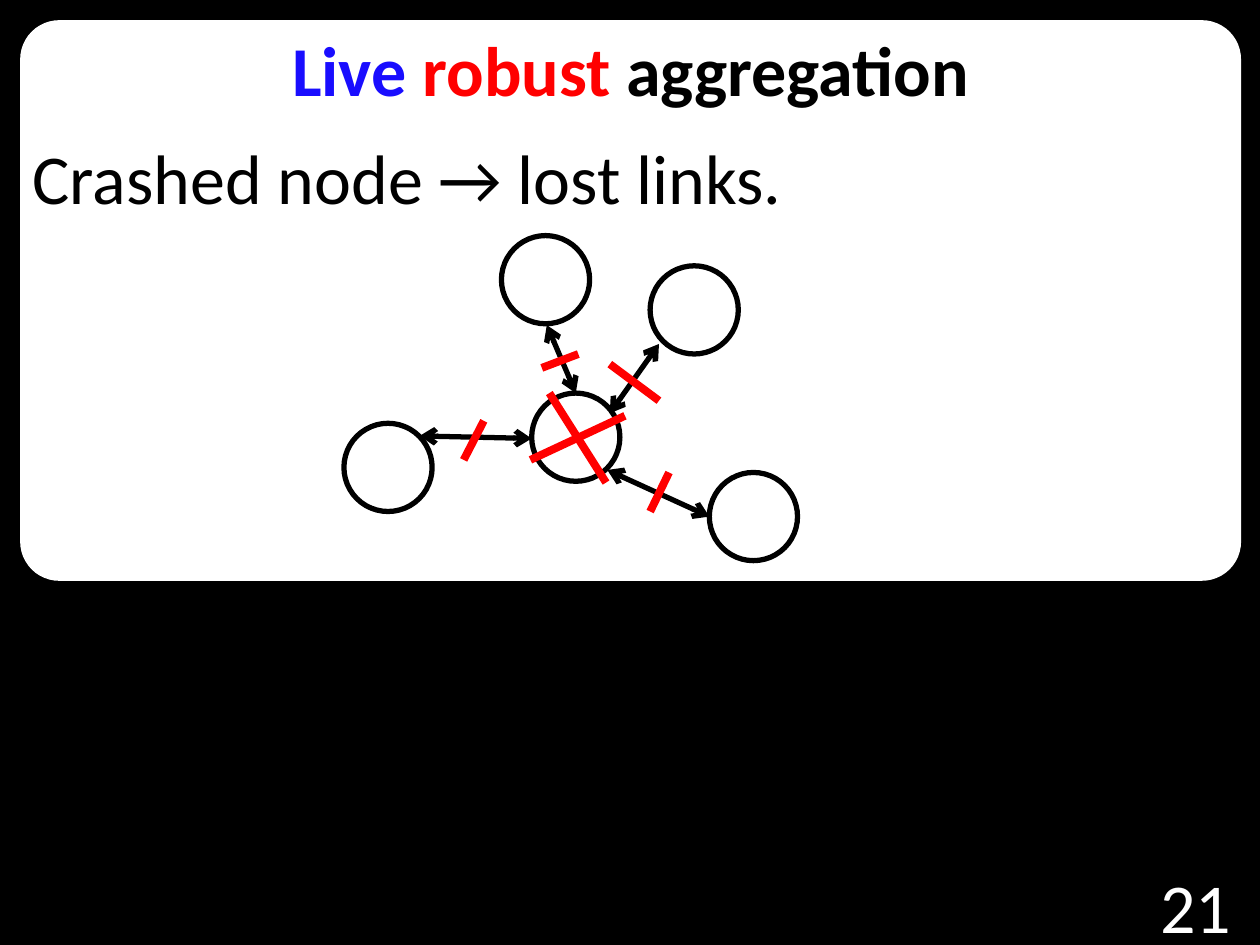
import pptx
import pptx.util
import pptx.dml.color
import pptx.enum.shapes
import pptx.enum.text
import pptx.oxml.ns
import pptx.oxml.xmlchemy
from pptx.util import Inches

COLORS = {"black": "000000", "white": "FFFFFF", "blue": "190DFF", "red": "FF0000"}
SHAPES = pptx.enum.shapes.MSO_SHAPE
ALIGN = pptx.enum.text.PP_ALIGN
ANCHOR = pptx.enum.text.MSO_ANCHOR
NODE_SIZE = 0.7


def color(name):
    return pptx.dml.color.RGBColor.from_string(COLORS[name])


def add_xml(parent, tag, **attributes):
    child = pptx.oxml.xmlchemy.OxmlElement(tag)
    for name, value in attributes.items():
        child.set(name, value)
    parent.append(child)


class SlideBuilder:
    font_name = "Calibri"
    font_size = 40

    def __init__(self, page):
        self.page = page
        page.background.fill.solid()
        page.background.fill.fore_color.rgb = color("black")

    def text(self, box, spans, align, anchor=ANCHOR.TOP, bold=False):
        """Write one paragraph of (words, colour) spans."""
        frame = box.text_frame
        frame.word_wrap = True
        frame.auto_size = pptx.enum.text.MSO_AUTO_SIZE.NONE
        frame.vertical_anchor = anchor
        para = frame.paragraphs[0]
        para.alignment = align
        para.space_before = pptx.util.Pt(0)
        para.font.name = self.font_name
        para.font.size = pptx.util.Pt(self.font_size)
        para.font.bold = bold
        for words, name in spans:
            span = para.add_run()
            span.text = words
            span.font.color.rgb = color(name)
        return para

    def place(self, box, left, top, width, height):
        box.left, box.top = Inches(left), Inches(top)
        box.width, box.height = Inches(width), Inches(height)

    def title(self, spans, *area):
        box = self.page.shapes.title
        self.place(box, *area)
        self.text(box, spans, ALIGN.CENTER, bold=True)

    def body(self, words, *area):
        box = self.page.placeholders[1]
        self.place(box, *area)
        para = self.text(box, [(words, "black")], ALIGN.LEFT)
        properties = para._p.get_or_add_pPr()
        properties.set("marL", "0")
        properties.set("indent", "0")
        add_xml(properties, "a:buNone")
        # Schema order: the bullet choice precedes the default run properties.
        defaults = properties.find(pptx.oxml.ns.qn("a:defRPr"))
        properties.append(defaults)

    def shape(self, kind, left, top, width, height, fill=None, line=None):
        box = self.page.shapes.add_shape(
            kind, Inches(left), Inches(top), Inches(width), Inches(height))
        box.shadow.inherit = False
        if fill:
            box.fill.solid()
            box.fill.fore_color.rgb = color(fill)
        else:
            box.fill.background()
        if line:
            box.line.color.rgb = color(line)
            box.line.width = pptx.util.Pt(3)
        else:
            box.line.fill.background()
        return box

    def card(self, *area):
        """Add the white panel behind the placeholders."""
        box = self.shape(SHAPES.ROUNDED_RECTANGLE, *area, fill="white")
        box.adjustments[0] = 0.07
        self.page.shapes.title.element.addprevious(box.element)

    def page_number(self, number, *area):
        box = self.shape(SHAPES.ROUNDED_RECTANGLE, *area, fill="black")
        self.text(box, [(number, "white")], ALIGN.CENTER, ANCHOR.MIDDLE)

    def node(self, left, top):
        self.shape(SHAPES.OVAL, left, top, NODE_SIZE, NODE_SIZE, line="black")

    def line(self, start, end, name, width, shapes=None):
        connector = (shapes or self.page.shapes).add_connector(
            pptx.enum.shapes.MSO_CONNECTOR.STRAIGHT, *map(Inches, start + end))
        connector.line.color.rgb = color(name)
        connector.line.width = pptx.util.Pt(width)
        add_xml(connector.element.spPr, "a:effectLst")
        return connector

    def link(self, start, end):
        connector = self.line(start, end, "black", 3)
        outline = connector.line._get_or_add_ln()
        for tag in ("a:headEnd", "a:tailEnd"):
            add_xml(outline, tag, type="arrow")

    def strike(self, start, end, shapes=None):
        self.line(start, end, "red", 4.5, shapes)

    def cross(self, *strokes):
        group = self.page.shapes.add_group_shape()
        for start, end in strokes:
            self.strike(start, end, group.shapes)


def main():
    deck = pptx.Presentation()
    deck.slide_width, deck.slide_height = Inches(10), Inches(7.5)
    slide = SlideBuilder(deck.slides.add_slide(deck.slide_layouts[1]))

    slide.card(0.16, 0.16, 9.69, 4.45)
    slide.title([("Live ", "blue"), ("robust", "red"), (" aggregation", "black")],
                0.16, 0.16, 9.69, 0.77)
    slide.body("Crashed node → lost links.", 0.16, 1.02, 9.69, 0.77)
    slide.page_number("21", 8.98, 6.87, 1.02, 0.63)

    crashed = (4.22, 3.12)
    neighbours = [(3.98, 1.87), (2.73, 3.36), (5.16, 2.11), (5.63, 3.75)]
    for corner in [crashed] + neighbours:
        slide.node(*corner)

    links = [
        ((4.22, 3.48), (3.33, 3.46)),
        ((4.34, 2.58), (4.57, 3.12)),
        ((5.23, 2.73), (4.84, 3.28)),
        ((5.63, 4.1), (4.82, 3.73)),
    ]
    for start, end in links:
        slide.link(start, end)

    slide.cross(((4.36, 3.12), (4.81, 3.83)), ((4.96, 3.3), (4.21, 3.65)))
    link_strikes = [
        ((4.84, 2.89), (5.23, 3.18)),
        ((5.31, 3.75), (5.16, 4.06)),
        ((3.84, 3.34), (3.68, 3.65)),
        ((4.59, 2.81), (4.3, 2.92)),
    ]
    for start, end in link_strikes:
        slide.strike(start, end)

    deck.save("out.pptx")


if __name__ == "__main__":
    main()
